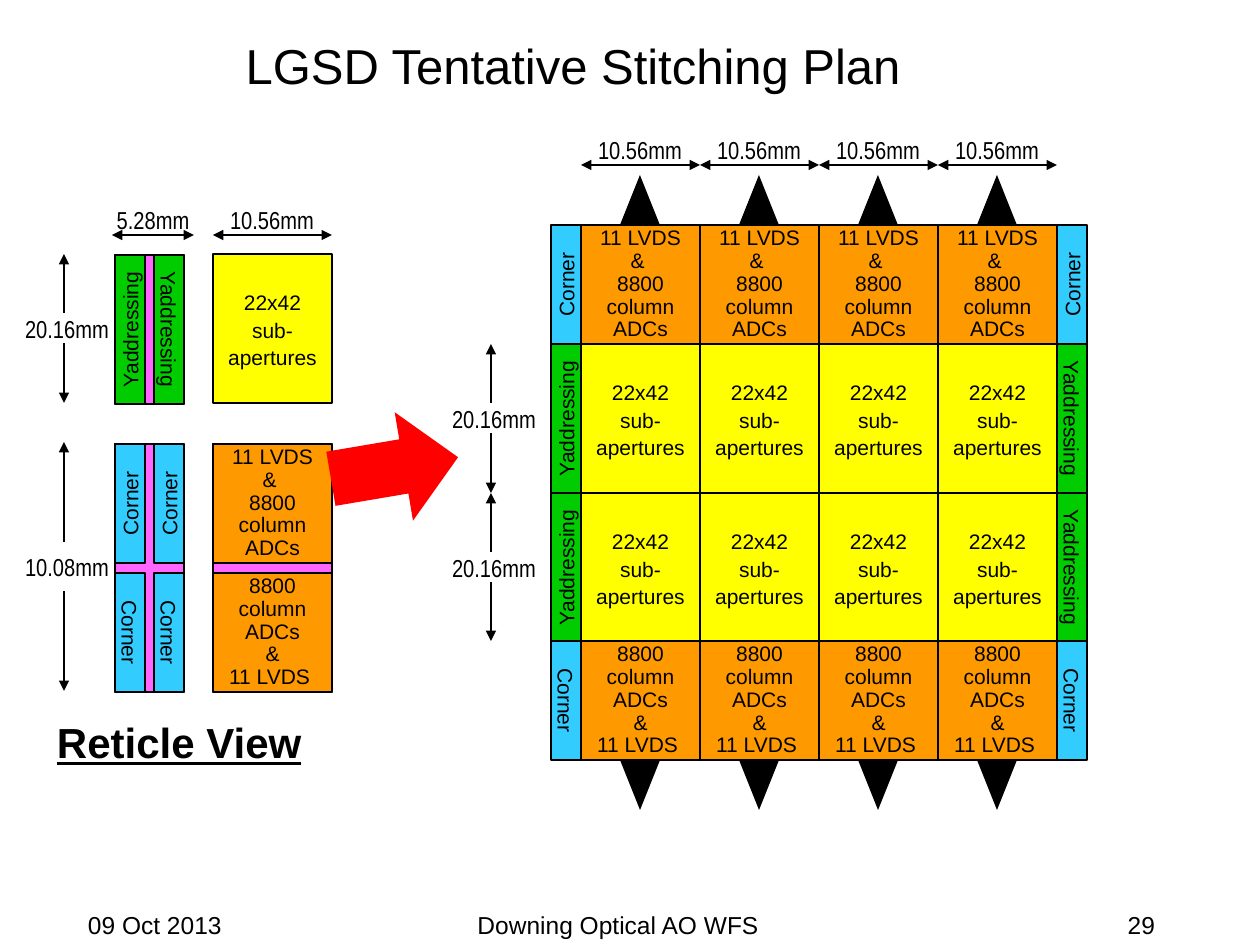
from dataclasses import dataclass

import pptx
import pptx.util
import pptx.dml.color
import pptx.enum.shapes
import pptx.enum.text
import pptx.oxml.ns
from lxml import etree

PX = 914400 / 126
COLORS = {
    "black": "000000",
    "subaperture": "FFFF00",
    "readout": "FF9900",
    "addressing": "00CC00",
    "corner": "33CCFF",
    "scribe": "FF66FF",
    "arrow": "FF0000",
}
SHAPE = pptx.enum.shapes.MSO_SHAPE
ALIGN = pptx.enum.text.PP_ALIGN
ANCHOR = pptx.enum.text.MSO_ANCHOR
AUTO_SIZE = pptx.enum.text.MSO_AUTO_SIZE
UP, DOWN = "vert270", "vert"


@dataclass(frozen=True)
class Style:
    size: int = 12
    font: str = "Arial"
    align: ALIGN = ALIGN.CENTER
    anchor: ANCHOR = ANCHOR.MIDDLE
    spacing: float = 1.0
    insets: tuple = (13, 6, 13, 6)  # left, top, right, bottom
    emphasis: bool = False
    wrap: bool = True
    direction: str = ""


@dataclass(frozen=True)
class Block:
    """A kind of chip block: its fill, its text and the style of the text."""
    color: str
    lines: tuple = ()
    style: Style = Style()


@dataclass(frozen=True)
class VerticalDimension:
    x: int
    top: int
    bottom: int
    gap: int
    text: str


READOUT = Style(spacing=0.9)
SUBAPERTURES = Block("subaperture", ("22x42", "sub- apertures"),
                     Style(spacing=1.1, insets=(0, 6, 0, 6)))
TOP_READOUT = Block("readout", ("11 LVDS", "& ", "8800 column ADCs"), READOUT)
TOP_READOUT_JOINED = Block("readout", ("11 LVDS & ", "8800 column ADCs"), READOUT)
BOTTOM_READOUT = Block("readout", ("8800 column ADCs", "&", "11 LVDS "), READOUT)
SCRIBE = Block("scribe")
CORNER = {d: Block("corner", ("Corner",), Style(insets=(0,) * 4, direction=d))
          for d in (UP, DOWN)}
ADDRESSING = {d: Block("addressing", ("Yaddressing",), Style(insets=(0,) * 4, direction=d))
              for d in (UP, DOWN)}
DIMENSION = Style(14, "Arial Narrow", insets=(0,) * 4, wrap=False)

CELL, TALL, SIDE = 119, 149, 30
COLUMNS = [581 + CELL * i for i in range(4)]
LEFT_EDGE, RIGHT_EDGE = COLUMNS[0] - SIDE, COLUMNS[-1] + CELL
TOP_ROW, ARRAY_ROWS, BOTTOM_ROW = 225, (344, 493), 641
RETICLE_X = 213
STRIPS = (115, 154)

VERTICAL_DIMENSIONS = (
    VerticalDimension(64, 254, 403, 30, "20.16mm"),
    VerticalDimension(64, 442, 691, 49, "10.08mm"),
    VerticalDimension(491, 344, 493, 30, "20.16mm"),
    VerticalDimension(491, 493, 641, 30, "20.16mm"),
)


def emu(*lengths: int) -> list:
    return [pptx.util.Emu(round(length * PX)) for length in lengths]


def rgb(name: str) -> pptx.dml.color.RGBColor:
    return pptx.dml.color.RGBColor.from_string(COLORS[name])


def write(shape, lines: tuple, style: Style) -> None:
    frame = shape.text_frame
    frame.word_wrap = style.wrap
    frame.vertical_anchor = style.anchor
    (frame.margin_left, frame.margin_top,
     frame.margin_right, frame.margin_bottom) = emu(*style.insets)
    if style.direction:
        frame._txBody.bodyPr.set("vert", style.direction)
    for index, line in enumerate(lines):
        paragraph = frame.add_paragraph() if index else frame.paragraphs[0]
        paragraph.alignment = style.align
        paragraph.line_spacing = style.spacing
        run = paragraph.add_run()
        run.text = line
        run.font.name = style.font
        run.font.size = pptx.util.Pt(style.size)
        run.font.color.rgb = rgb("black")
        if style.emphasis:
            run.font.bold = run.font.underline = True


def add_text(slide, box: tuple, text: str, style: Style):
    shape = slide.shapes.add_textbox(*emu(*box))
    write(shape, (text,), style)
    return shape


def add_filled(slide, kind: SHAPE, box: tuple, color: str, rotation: float = 0):
    shape = slide.shapes.add_shape(kind, *emu(*box))
    shape.shadow.inherit = False
    shape.rotation = rotation
    shape.fill.solid()
    shape.fill.fore_color.rgb = rgb(color)
    shape.line.fill.background()
    return shape


def add_block(slide, block: Block, x: int, y: int, width: int, height: int) -> None:
    shape = add_filled(slide, SHAPE.RECTANGLE, (x, y, width, height), block.color)
    shape.line.color.rgb = rgb("black")
    shape.line.width = pptx.util.Pt(1.5)
    write(shape, block.lines, block.style)


def add_arrow(slide, start: tuple, end: tuple, heads: tuple) -> None:
    """Draw a line with arrowheads at the named ends, headEnd being the start."""
    connector = slide.shapes.add_connector(
        pptx.enum.shapes.MSO_CONNECTOR.STRAIGHT, *emu(*start, *end))
    connector.line.color.rgb = rgb("black")
    connector.line.width = pptx.util.Pt(1.5)
    outline = connector.line._get_or_add_ln()
    for head in heads:
        etree.SubElement(outline, pptx.oxml.ns.qn(f"a:{head}"), type="triangle")
    etree.SubElement(connector._element.spPr, pptx.oxml.ns.qn("a:effectLst"))


def add_dimension_label(slide, box: tuple, text: str) -> None:
    label = add_text(slide, box, text, DIMENSION)
    label.text_frame.auto_size = AUTO_SIZE.SHAPE_TO_FIT_TEXT


def add_horizontal_dimension(slide, left: int, right: int, y: int, text: str) -> None:
    add_arrow(slide, (left, y), (right, y), ("headEnd", "tailEnd"))
    add_dimension_label(slide, ((left + right) // 2 - 46, y - 30, 92, 30), text)


def add_vertical_dimension(slide, dimension: VerticalDimension) -> None:
    x, middle = dimension.x, (dimension.top + dimension.bottom) // 2
    upper = middle - dimension.gap // 2
    add_arrow(slide, (x, upper), (x, dimension.top), ("tailEnd",))
    add_arrow(slide, (x, dimension.bottom), (x, upper + dimension.gap), ("headEnd",))
    add_dimension_label(slide, (x - 39, middle - 14, 84, 30), dimension.text)


def draw_reticle(slide) -> None:
    add_block(slide, SUBAPERTURES, RETICLE_X, 254, CELL, TALL)
    add_block(slide, SCRIBE, RETICLE_X, 444, CELL, 248)
    add_block(slide, TOP_READOUT, RETICLE_X, 444, CELL, CELL)
    add_block(slide, BOTTOM_READOUT, RETICLE_X, 573, CELL, CELL)
    for y, height in ((255, TALL), (444, 248)):
        add_block(slide, SCRIBE, STRIPS[0], y, 69, height)
    for x, direction in zip(STRIPS, (UP, DOWN)):
        add_block(slide, ADDRESSING[direction], x, 255, SIDE, TALL)
        add_block(slide, CORNER[UP], x, 444, SIDE, CELL)
        add_block(slide, CORNER[DOWN], x, 573, SIDE, CELL)
    add_horizontal_dimension(slide, 112, 194, 235, "5.28mm")
    add_horizontal_dimension(slide, RETICLE_X, RETICLE_X + CELL, 235, "10.56mm")
    add_filled(slide, SHAPE.RIGHT_ARROW, (330, 413, 129, 110), "arrow", 350.4)
    add_text(slide, (44, 711, 297, 63), "Reticle View",
             Style(24, align=ALIGN.LEFT, anchor=ANCHOR.TOP, emphasis=True))


def draw_stitched_sensor(slide) -> None:
    for x, direction in ((LEFT_EDGE, UP), (RIGHT_EDGE, DOWN)):
        add_block(slide, CORNER[UP], x, TOP_ROW, SIDE, CELL)
        for y in ARRAY_ROWS:
            add_block(slide, ADDRESSING[direction], x, y, SIDE, TALL)
        add_block(slide, CORNER[DOWN], x, BOTTOM_ROW, SIDE, CELL)
    for index, x in enumerate(COLUMNS):
        top_block = TOP_READOUT_JOINED if index else TOP_READOUT
        add_block(slide, top_block, x, TOP_ROW, CELL, CELL)
        for y in ARRAY_ROWS:
            add_block(slide, SUBAPERTURES, x, y, CELL, TALL)
        add_block(slide, BOTTOM_READOUT, x, BOTTOM_ROW, CELL, CELL)
        for y, rotation in ((TOP_ROW - 50, 0), (BOTTOM_ROW + CELL, 180)):
            add_filled(slide, SHAPE.ISOSCELES_TRIANGLE, (x + 39, y, 40, 50), "black", rotation)
        add_horizontal_dimension(slide, x, x + CELL, 165, "10.56mm")


def main() -> None:
    presentation = pptx.Presentation()
    presentation.slide_width, presentation.slide_height = emu(1260, 945)
    slide = presentation.slides.add_slide(presentation.slide_layouts[5])
    title = slide.shapes.title
    title.left, title.top, title.width, title.height = emu(123, 21, 900, 87)
    write(title, ("LGSD Tentative Stitching Plan",), Style(28))
    draw_reticle(slide)
    draw_stitched_sensor(slide)
    for dimension in VERTICAL_DIMENSIONS:
        add_vertical_dimension(slide, dimension)
    for x, width, text, align in ((88, 262, "09 Oct 2013", ALIGN.LEFT),
                                  (422, 399, "Downing Optical AO WFS ", ALIGN.CENTER),
                                  (906, 262, "29", ALIGN.RIGHT)):
        left_inset = 0 if align == ALIGN.LEFT else 13
        add_text(slide, (x, 882, width, 63), text,
                 Style(14, align=align, anchor=ANCHOR.BOTTOM, insets=(left_inset, 6, 13, 6)))
    presentation.save("out.pptx")


if __name__ == "__main__":
    main()
